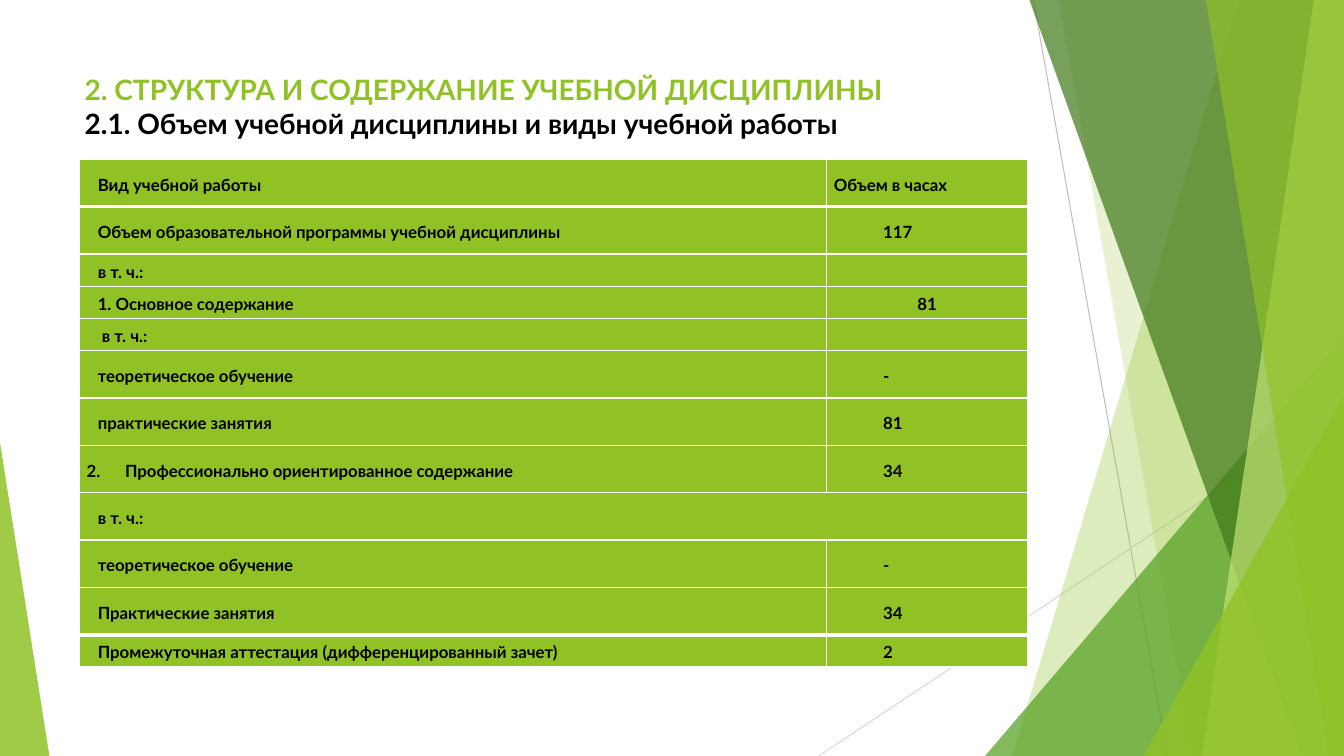
import pptx
import pptx.util
import pptx.dml.color
import pptx.enum.shapes
import pptx.enum.text
import pptx.oxml
import pptx.oxml.ns
from lxml import etree

PX = 9144
WIDTH, HEIGHT = 1333, 750
FONT = "Lato"
COLORS = {
    "lime": "90C226", "green": "54A021", "dark": "3F7819", "pale": "C0E474",
    "white": "FFFFFF", "black": "000000", "gray": "BFBFBF", "light_gray": "D9D9D9",
}
TITLE_BOX = (74, 67, 940, 89)
TITLE_LINES = [
    ("2. СТРУКТУРА И СОДЕРЖАНИЕ УЧЕБНОЙ ДИСЦИПЛИНЫ", "lime"),
    ("2.1. Объем учебной дисциплины и виды учебной работы", "black"),
]
RAYS = [
    ((1025, 0), (1158, 750), "gray"),
    ((1333, 403), (812, 750), "light_gray"),
]
# kind, geometry, color, opacity
FACETS = [
    ("band", (1228, 1004), "lime", 30),
    ("band", (1050, 1183), "lime", 20),
    ("triangle", (977, 333, 356, 1), "green", 72),
    ("band", (1021, 1291), "dark", 70),
    ("band", (1303, 1192), "pale", 70),
    ("band", (1196, 1318), "lime", 65),
    ("triangle", (1134, 393, 199, 1), "lime", 80),
    ("triangle", (0, 439, 49, 0), "lime", 85),
]
TABLE_AT = (79, 158)
COLUMNS = (741, 199)
TALL, LOW = 47, 32
ROWS = [
    ("Вид учебной работы", "Объем в часах", TALL),
    ("Объем образовательной программы учебной дисциплины", "117", TALL),
    ("в т. ч.:", "", LOW),
    ("1. Основное содержание", "81", LOW),
    (" в т. ч.:", "", LOW),
    ("теоретическое обучение", "-", TALL),
    ("практические занятия", "81", TALL),
    ("Профессионально ориентированное содержание", "34", TALL),
    ("в т. ч.:", None, TALL),
    ("теоретическое обучение", "-", TALL),
    ("Практические занятия", "34", TALL),
    ("Промежуточная аттестация (дифференцированный зачет)", "2", LOW),
]
HEADER_ROW, CENTERED_ROW, NUMBERED_ROW, LAST_ROW = 0, 3, 7, len(ROWS) - 1
LABEL_INDENT, HOURS_INDENT, NUMBER_INDENT = 11, 49, 38


def color(name):
    return pptx.dml.color.RGBColor.from_string(COLORS[name])


def add_child(parent, tag, **attributes):
    child = etree.SubElement(parent, pptx.oxml.ns.qn(tag))
    for key, value in attributes.items():
        child.set(key, str(value))
    return child


def set_font(font, size, color_name):
    font.name = FONT
    font.size = pptx.util.Pt(size)
    font.bold = True
    font.color.rgb = color(color_name)


def add_ray(slide, start, end, color_name):
    ray = slide.shapes.add_connector(
        pptx.enum.shapes.MSO_CONNECTOR.STRAIGHT, *(value * PX for value in start + end))
    ray.line.color.rgb = color(color_name)
    ray.line.width = pptx.util.Pt(0.75)
    add_child(ray._element.spPr, "a:effectLst")


def add_facet(slide, kind, geometry, color_name, opacity):
    if kind == "band":
        top_left, bottom_left = geometry
        builder = slide.shapes.build_freeform(top_left, 0, scale=PX)
        builder.add_line_segments([(WIDTH, 0), (WIDTH, HEIGHT), (bottom_left, HEIGHT)])
        facet = builder.convert_to_shape()
    else:
        left, top, width, apex = geometry
        facet = slide.shapes.add_shape(
            pptx.enum.shapes.MSO_SHAPE.ISOSCELES_TRIANGLE,
            left * PX, top * PX, width * PX, (HEIGHT - top) * PX)
        facet.adjustments[0] = apex
    facet.shadow.inherit = False
    facet.line.fill.background()
    facet.fill.solid()
    facet.fill.fore_color.rgb = color(color_name)
    fill_color = facet._element.spPr.find(".//" + pptx.oxml.ns.qn("a:srgbClr"))
    add_child(fill_color, "a:alpha", val=opacity * 1000)


def fill_title(title):
    title.left, title.top, title.width, title.height = (value * PX for value in TITLE_BOX)
    frame = title.text_frame
    frame.word_wrap = True
    frame.auto_size = pptx.enum.text.MSO_AUTO_SIZE.NONE
    frame.vertical_anchor = pptx.enum.text.MSO_ANCHOR.TOP
    paragraph = frame.paragraphs[0]
    paragraph.alignment = pptx.enum.text.PP_ALIGN.LEFT
    for index, (text, color_name) in enumerate(TITLE_LINES):
        if index:
            paragraph.add_line_break()
        run = paragraph.add_run()
        run.text = text
        set_font(run.font, 20, color_name)


def style_cell(cell, row, column):
    cell.margin_left = cell.margin_right = 7 * PX
    cell.margin_top = cell.margin_bottom = 0
    cell.vertical_anchor = pptx.enum.text.MSO_ANCHOR.MIDDLE
    properties = cell._tc.get_or_add_tcPr()
    for side in "LRTB":
        thick = (row, side) in [(HEADER_ROW, "B"), (HEADER_ROW + 1, "T"),
                                (LAST_ROW - 1, "B"), (LAST_ROW, "T")]
        border = add_child(properties, "a:ln" + side, w=pptx.util.Pt(3 if thick else 1))
        add_child(add_child(border, "a:solidFill"), "a:srgbClr", val=COLORS["white"])
    cell.fill.solid()
    cell.fill.fore_color.rgb = color("lime")


def write_cell(cell, text, row, column):
    paragraph = cell.text_frame.paragraphs[0]
    paragraph.text = text
    paragraph.line_spacing = 1.15 if text else 1.0
    properties = paragraph._p.get_or_add_pPr()
    if column == 0 and row == NUMBERED_ROW:
        properties.set("marL", str(NUMBER_INDENT * PX))
        properties.set("indent", str(-NUMBER_INDENT * PX))
        add_child(properties, "a:buAutoNum", type="arabicPeriod", startAt=2)
    elif column == 0:
        properties.set("indent", str(LABEL_INDENT * PX))
    elif row == CENTERED_ROW:
        paragraph.alignment = pptx.enum.text.PP_ALIGN.CENTER
    elif row != HEADER_ROW:
        properties.set("indent", str(HOURS_INDENT * PX))
    set_font(paragraph.font, 12, "black")


def add_hours_table(slide):
    left, top = TABLE_AT
    height = sum(row[2] for row in ROWS)
    table = slide.shapes.add_table(
        len(ROWS), len(COLUMNS), left * PX, top * PX, sum(COLUMNS) * PX, height * PX).table
    table.first_row = table.horz_banding = False
    for column, width in enumerate(COLUMNS):
        table.columns[column].width = width * PX
    for row, (label, hours, row_height) in enumerate(ROWS):
        table.rows[row].height = row_height * PX
        for column, text in enumerate((label, hours)):
            cell = table.cell(row, column)
            style_cell(cell, row, column)
            if text is not None:
                write_cell(cell, text, row, column)
        if hours is None:
            table.cell(row, 0).merge(table.cell(row, 1))


def main():
    presentation = pptx.Presentation()
    presentation.slide_width, presentation.slide_height = WIDTH * PX, HEIGHT * PX
    slide = presentation.slides.add_slide(presentation.slide_layouts[5])
    for ray in RAYS:
        add_ray(slide, *ray)
    for facet in FACETS:
        add_facet(slide, *facet)
    fill_title(slide.shapes.title)
    add_hours_table(slide)
    presentation.save("out.pptx")


if __name__ == "__main__":
    main()
